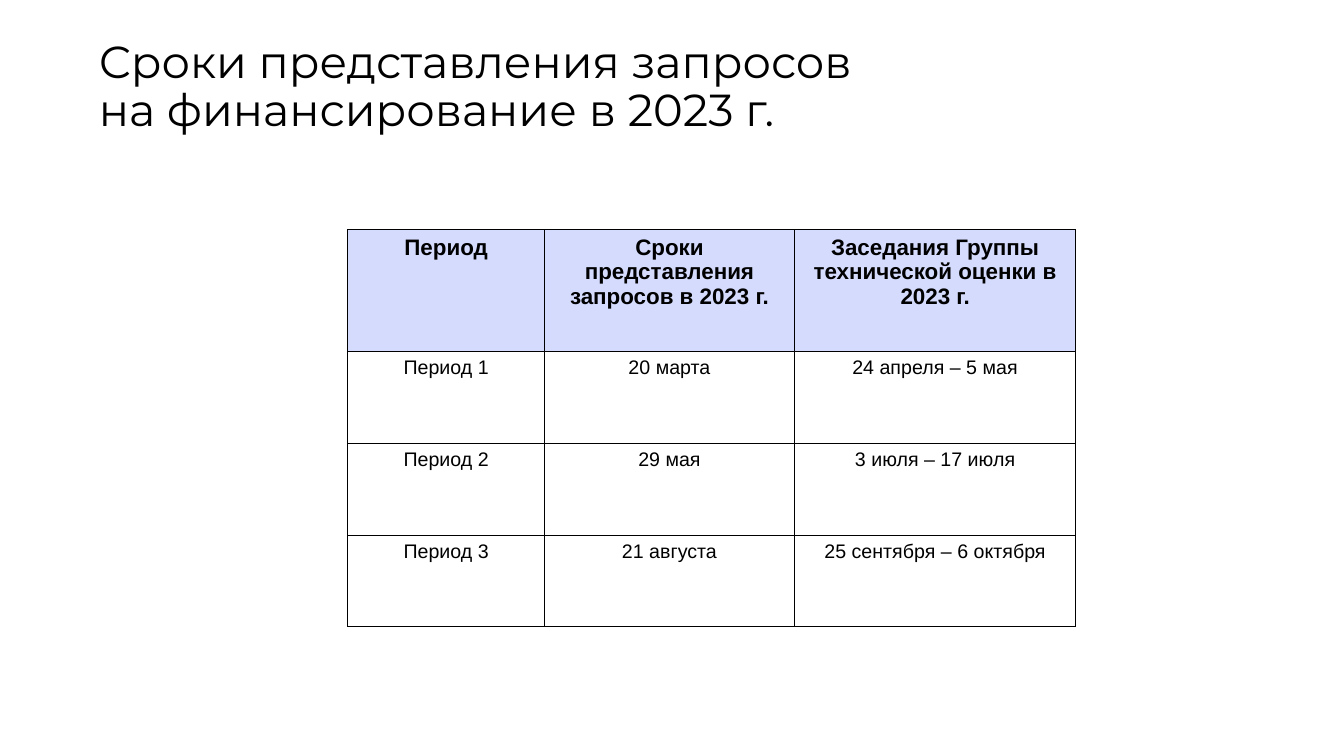
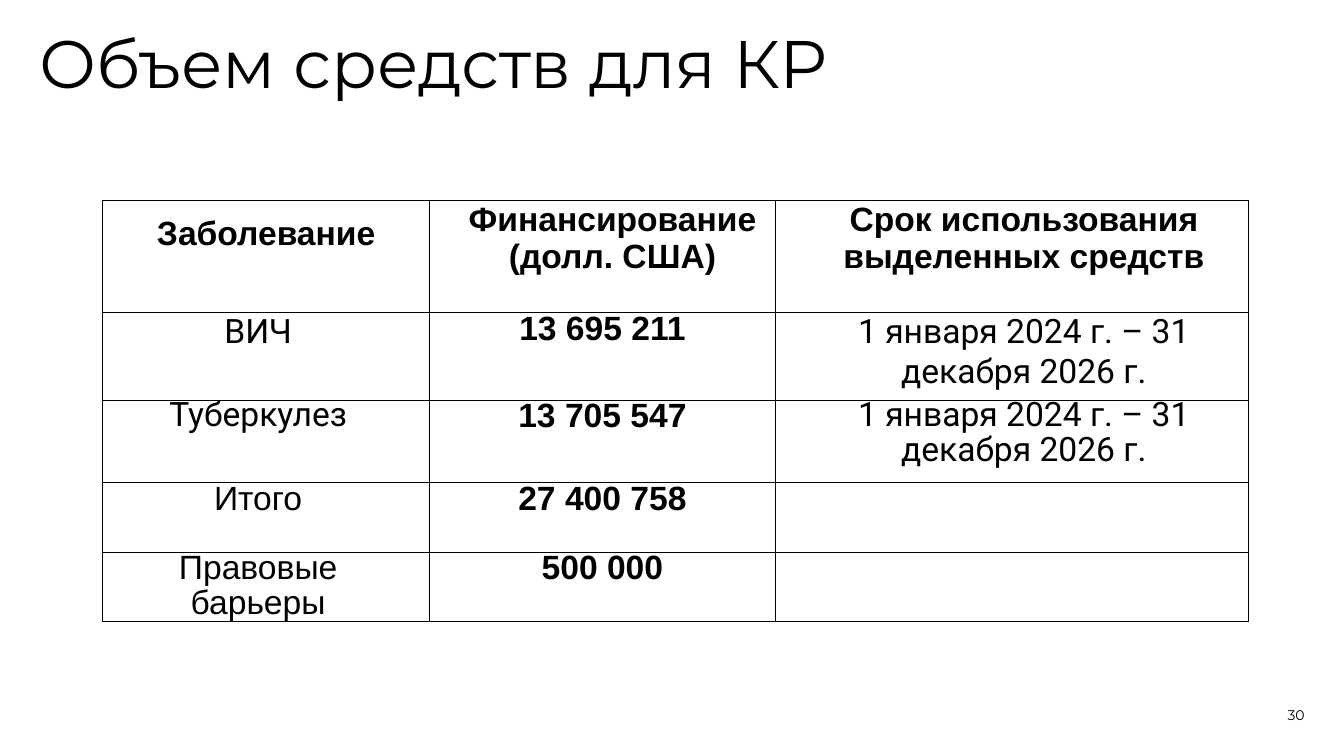
from dataclasses import dataclass

from lxml import etree
from pptx import Presentation
from pptx.dml.color import RGBColor
from pptx.enum.text import MSO_ANCHOR, PP_ALIGN
from pptx.oxml.ns import qn
from pptx.util import Inches, Pt

LEFT, CENTER, RIGHT = PP_ALIGN.LEFT, PP_ALIGN.CENTER, PP_ALIGN.RIGHT
TOP, BOTTOM = MSO_ANCHOR.TOP, MSO_ANCHOR.BOTTOM


@dataclass(frozen=True)
class Theme:
    ink: str = "000000"
    paper: str = "FFFFFF"
    header_fill: str = "D5DBFD"
    title_font: str = "Montserrat"
    table_font: str = "Arial"
    accent_font: str = "Roboto"
    title_size: int = 32
    large_title_size: int = 48
    header_size: int = 16
    body_size: int = 14
    funding_size: int = 24
    number_size: int = 10
    border_width: float = 1


THEME = Theme()

DEADLINES_TITLE = "Сроки представления запросов на\u00a0финансирование в 2023 г."
DEADLINES = [
    ("Период", "Сроки представления запросов в 2023 г.", "Заседания Группы технической оценки в 2023 г."),
    ("Период 1", "20 марта", "24 апреля – 5 мая"),
    ("Период 2", "29 мая", "3 июля – 17 июля"),
    ("Период 3", "21 августа", "25 сентября – 6 октября"),
]

FUNDING_TITLE = "Объем средств для КР"
FUNDING = [
    ("Заболевание", "Финансирование (долл. США)", "Срок использования выделенных средств"),
    ("ВИЧ", "13 695 211", "1 января 2024 г. – 31 декабря 2026 г."),
    ("Туберкулез", "13 705 547", "1 января 2024 г. – 31 декабря 2026 г."),
    ("Итого", "27 400 758", ""),
    ("Правовые барьеры", "500 000", ""),
]
FUNDING_SPACING = [
    (Pt(37.2), None, None),
    (None, Pt(24.8), None),
    (Pt(25), Pt(24.8), Pt(25)),
    (Pt(24.8), Pt(24.8), None),
    (Pt(24.8), Pt(24.8), None),
]
FUNDING_SIDES = [(0.3, 0.46), (0, 0), (0.44, 0.2)]
FUNDING_HEADER_SIDES = [(0, 0), (0.2, 0), (0.44, 0.2)]
ACCENT_ROWS = (1, 2)
PAGE_NUMBER = "30"


def write_text(frame, text, size, font=THEME.table_font, bold=False, align=LEFT, spacing=None):
    frame.word_wrap = True
    paragraph = frame.paragraphs[0]
    paragraph.alignment = align
    if spacing is not None:
        paragraph.line_spacing = spacing
    if not text:
        return
    run = paragraph.add_run()
    run.text = text
    run.font.size = Pt(size)
    run.font.name = font
    run.font.bold = bold
    run.font.color.rgb = RGBColor.from_string(THEME.ink)


def add_text(slide, box, text, anchor=TOP, **text_format):
    frame = slide.shapes.add_textbox(*map(Inches, box)).text_frame
    frame.margin_left = frame.margin_top = frame.margin_right = frame.margin_bottom = 0
    frame.vertical_anchor = anchor
    write_text(frame, text, **text_format)


def add_title(slide, box, text, size):
    add_text(slide, box, text, size=size, font=THEME.title_font, spacing=0.9)


def set_borders(cell):
    properties = cell._tc.get_or_add_tcPr()
    for index, side in enumerate(("a:lnL", "a:lnR", "a:lnT", "a:lnB")):
        line = etree.Element(qn(side), w=str(Pt(THEME.border_width)))
        fill = etree.SubElement(line, qn("a:solidFill"))
        etree.SubElement(fill, qn("a:srgbClr"), val=THEME.ink)
        properties.insert(index, line)


def add_grid(slide, left, top, widths, heights, rows, format_cell):
    table = slide.shapes.add_table(
        len(rows), len(widths), Inches(left), Inches(top), Inches(sum(widths)), Inches(sum(heights))
    ).table
    table.first_row = table.horz_banding = False
    for column, width in zip(table.columns, widths):
        column.width = Inches(width)
    for row, height in zip(table.rows, heights):
        row.height = Inches(height)
    for row_index, texts in enumerate(rows):
        for column_index, text in enumerate(texts):
            cell = table.cell(row_index, column_index)
            format_cell(cell, text, row_index, column_index)
            set_borders(cell)


def fill_cell(cell, color):
    cell.fill.solid()
    cell.fill.fore_color.rgb = RGBColor.from_string(color)


def format_deadline(cell, text, row, column):
    header = row == 0
    fill_cell(cell, THEME.header_fill if header else THEME.paper)
    size = THEME.header_size if header else THEME.body_size
    write_text(cell.text_frame, text, size=size, bold=header, align=CENTER)


def format_funding(cell, text, row, column):
    fill_cell(cell, THEME.paper)
    sides = FUNDING_HEADER_SIDES if row == 0 else FUNDING_SIDES
    cell.margin_left, cell.margin_right = map(Inches, sides[column])
    cell.margin_top = cell.margin_bottom = 0
    amount = column == 1
    accent = row in ACCENT_ROWS and not amount
    write_text(
        cell.text_frame,
        text,
        size=THEME.funding_size,
        font=THEME.accent_font if accent else THEME.table_font,
        bold=row == 0 or amount,
        align=CENTER,
        spacing=FUNDING_SPACING[row][column],
    )


def build_deadlines(slide):
    add_title(slide, (0.98, 0.39, 10.69, 0.8), DEADLINES_TITLE, THEME.title_size)
    heights = [1.21] + [0.91] * (len(DEADLINES) - 1)
    add_grid(slide, 3.45, 2.28, (1.95, 2.48, 2.79), heights, DEADLINES, format_deadline)


def build_funding(slide):
    add_title(slide, (0.39, 0.3, 12.55, 0.8), FUNDING_TITLE, THEME.large_title_size)
    add_text(
        slide, (11.96, 6.78, 0.98, 0.4), PAGE_NUMBER, anchor=BOTTOM,
        size=THEME.number_size, font=THEME.title_font, align=RIGHT,
    )
    heights = (1.11, 0.87, 0.82, 0.69, 0.69)
    add_grid(slide, 1.02, 1.99, (3.24, 3.43, 4.69), heights, FUNDING, format_funding)


def main():
    presentation = Presentation()
    presentation.slide_width = Inches(13.33)
    presentation.slide_height = Inches(7.5)
    for build in (build_deadlines, build_funding):
        build(presentation.slides.add_slide(presentation.slide_layouts[6]))
    presentation.save("out.pptx")


if __name__ == "__main__":
    main()
